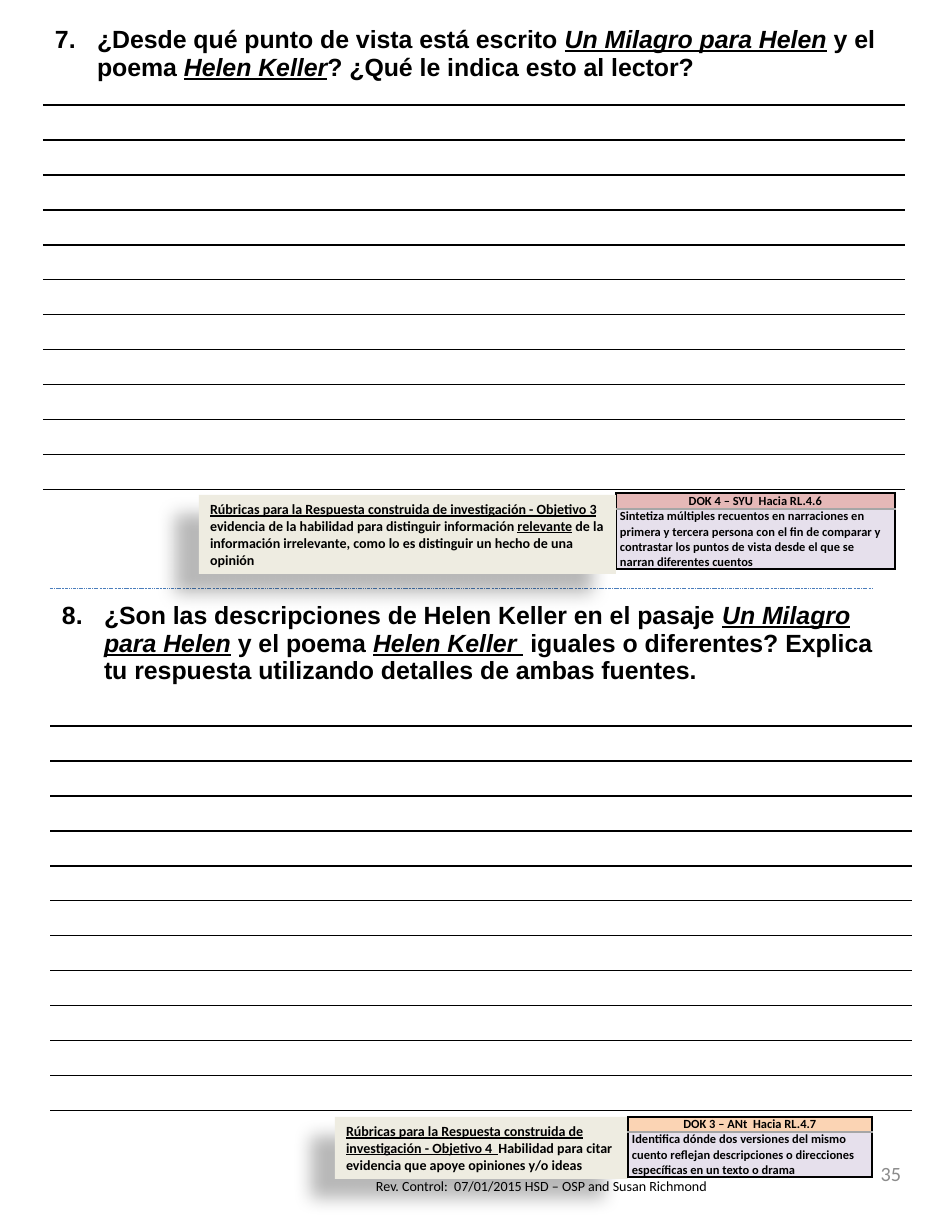
from typing import NamedTuple
from lxml import etree
from pptx import Presentation
from pptx import util as u
from pptx.dml.color import RGBColor
from pptx.enum import dml, shapes, text
from pptx.oxml import ns

PX = 914400 / 112
NO_STYLE = "{2D5ABB26-0587-4C30-8999-92F81FD0307C}"
LINE_GAP = 35
LINE_COUNT = 11

class Theme(NamedTuple):
    ink: str = "000000"
    muted: str = "8C8C8C"
    divider: str = "4B7EBC"
    cell_rule: str = "A6A6A6"
    rubric: str = "EEECE1"
    standard: str = "E6E0EC"
    heading_font: str = "Arial"
    body_font: str = "Calibri"
    heading: int = 16
    number: int = 13
    small: int = 9
    tiny: int = 8

THEME = Theme()

class Box(NamedTuple):
    left: int
    top: int
    width: int
    height: int

class Run(NamedTuple):
    text: str
    italic: bool = False
    underline: bool = False

class Style(NamedTuple):
    size: int
    font: str = THEME.body_font
    color: str = THEME.ink
    bold: bool = True

class Question(NamedTuple):
    number: int
    box: Box
    runs: list[Run]

class Rubric(NamedTuple):
    box: Box
    paragraphs: list[list[Run]]

class Standard(NamedTuple):
    box: Box
    header_height: int
    header_fill: str
    code: str
    description: str

QUESTIONS = [
    Question(7, Box(43, 19, 862, 86), [
        Run("¿Desde qué punto de vista está escrito "), Run("Un Milagro para Helen", True, True),
        Run(" y el poema "), Run("Helen Keller", True, True),
        Run("? ¿Qué le indica esto al lector?")]),
    Question(8, Box(50, 595, 862, 131), [
        Run("¿Son las descripciones de Helen Keller en el pasaje "),
        Run("Un Milagro para Helen", True, True),
        Run(" y el poema "), Run("Helen Keller ", True, True),
        Run(" iguales o diferentes? Explica tu respuesta utilizando detalles de ambas fuentes.")]),
]
RUBRIC_3 = Rubric(Box(199, 495, 417, 79), [
    [Run("Rúbricas para la Respuesta construida de investigación - Objetivo 3", underline=True)],
    [Run("evidencia de la habilidad para distinguir información "),
     Run("relevante", underline=True),
     Run(" de la información irrelevante, como lo es distinguir un hecho de una opinión")]])
RUBRIC_4 = Rubric(Box(335, 1117, 293, 62), [
    [Run("Rúbricas para la Respuesta construida de investigación - Objetivo 4  ", underline=True),
     Run("Habilidad para citar evidencia que apoye opiniones y/o ideas")]])
STANDARDS = [
    Standard(Box(616, 493, 279, 76), 16, "E5B8B7", "DOK 4 – SYU  Hacia RL.4.6",
             "Sintetiza múltiples recuentos en narraciones en primera y tercera persona con el fin de "
             "comparar y contrastar los puntos de vista desde el que se narran diferentes cuentos"),
    Standard(Box(628, 1117, 244, 59), 14, "FBD4B4", "DOK 3 – ANt  Hacia RL.4.7",
             "Identifica dónde dos versiones del mismo cuento reflejan descripciones o direcciones "
             "específicas en un texto o drama"),
]

def px(length: int) -> int:
    return round(length * PX)

def child(parent, tag: str, **attributes):
    return etree.SubElement(parent, ns.qn(tag), {key: str(value) for key, value in attributes.items()})

def paint(fill, color: str) -> None:
    fill.solid()
    fill.fore_color.rgb = RGBColor.from_string(color)

def write(paragraph, runs: list[Run], style: Style) -> None:
    for item in runs:
        run = paragraph.add_run()
        run.text = item.text
        font = run.font
        font.size, font.name, font.bold = u.Pt(style.size), style.font, style.bold
        font.italic, font.underline = item.italic, item.underline
        font.color.rgb = RGBColor.from_string(style.color)

def set_margins(target, horizontal: int, vertical: int) -> None:
    target.margin_left = target.margin_right = px(horizontal)
    target.margin_top = target.margin_bottom = px(vertical)

def add_plain_table(slide, box: Box, heights: list[int]):
    frame = slide.shapes.add_table(len(heights), 1, *map(px, box))
    table = frame.table
    table.first_row = table.horz_banding = False
    frame._element.find(".//" + ns.qn("a:tableStyleId")).text = NO_STYLE
    for row, height in zip(table.rows, heights):
        row.height = px(height)
    return table

def add_borders(cell, **borders: str) -> None:
    for side, color in borders.items():
        line = child(cell._tc.get_or_add_tcPr(), f"a:ln{side}", w=12700)
        child(child(line, "a:solidFill"), "a:srgbClr", val=color)

def add_question(slide, question: Question) -> None:
    heights = [question.box.height] + [LINE_GAP] * LINE_COUNT
    table = add_plain_table(slide, question.box, heights)
    for index in range(len(heights)):
        cell = table.cell(index, 0)
        set_margins(cell, 12, 0 if index else 7)
        add_borders(cell, B=THEME.ink)
        cell.fill.background()
        if index:
            child(cell.text_frame.paragraphs[0]._p, "a:endParaRPr", sz=THEME.small * 100)
    paragraph = table.cell(0, 0).text_frame.paragraphs[0]
    write(paragraph, question.runs, Style(THEME.heading, THEME.heading_font))
    properties = paragraph._p.get_or_add_pPr()
    properties.set("marL", str(px(42)))
    properties.set("indent", str(px(-42)))
    child(properties, "a:buFont", typeface=THEME.heading_font)
    child(properties, "a:buAutoNum", type="arabicPeriod", startAt=question.number)

def add_rubric(slide, rubric: Rubric) -> None:
    shape = slide.shapes.add_shape(shapes.MSO_SHAPE.RECTANGLE, *map(px, rubric.box))
    paint(shape.fill, THEME.rubric)
    shape.line.fill.background()
    shadow = child(child(shape._element.spPr, "a:effectLst"), "a:outerShdw", blurRad=u.Pt(11.8),
                   dist=u.Pt(19.7), dir=141 * 60000, algn="tr", rotWithShape=0)
    child(child(shadow, "a:srgbClr", val=THEME.ink), "a:alpha", val=28000)
    frame = shape.text_frame
    frame.word_wrap = True
    frame.vertical_anchor = text.MSO_ANCHOR.TOP
    for index, runs in enumerate(rubric.paragraphs):
        paragraph = frame.add_paragraph() if index else frame.paragraphs[0]
        paragraph.alignment = text.PP_ALIGN.LEFT
        write(paragraph, runs, Style(THEME.small))

def add_standard(slide, standard: Standard) -> None:
    heights = [standard.header_height, standard.box.height - standard.header_height]
    table = add_plain_table(slide, standard.box, heights)
    ink, rule = THEME.ink, THEME.cell_rule
    rows = [(standard.code, standard.header_fill, ink, rule),
            (standard.description, THEME.standard, rule, ink)]
    for index, (content, fill, top, bottom) in enumerate(rows):
        cell = table.cell(index, 0)
        set_margins(cell, 4, 0)
        add_borders(cell, L=ink, R=ink, T=top, B=bottom)
        paint(cell.fill, fill)
        write(cell.text_frame.paragraphs[0], [Run(content)], Style(THEME.tiny))
    header = table.cell(0, 0)
    header.vertical_anchor = text.MSO_ANCHOR.MIDDLE
    header.text_frame.paragraphs[0].alignment = text.PP_ALIGN.CENTER

def add_label(slide, box: Box, content: str, style: Style, alignment, anchor) -> None:
    frame = slide.shapes.add_textbox(*map(px, box)).text_frame
    frame.word_wrap = True
    frame.vertical_anchor = anchor
    set_margins(frame, 12, 6)
    frame.paragraphs[0].alignment = alignment
    write(frame.paragraphs[0], [Run(content)], style)

def add_divider(slide) -> None:
    divider = slide.shapes.add_connector(shapes.MSO_CONNECTOR.STRAIGHT, *map(px, (50, 588, 872, 588)))
    divider.line.color.rgb = RGBColor.from_string(THEME.divider)
    divider.line.width = u.Pt(0.25)
    divider.line.dash_style = dml.MSO_LINE.DASH_DOT_DOT
    child(divider._element.spPr, "a:effectLst")

def main() -> None:
    presentation = Presentation()
    presentation.slide_width, presentation.slide_height = px(952), px(1232)
    slide = presentation.slides.add_slide(presentation.slide_layouts[6])
    add_label(slide, Box(364, 1172, 476, 29), "Rev. Control:  07/01/2015 HSD – OSP and Susan Richmond",
              Style(THEME.small, bold=False), text.PP_ALIGN.LEFT, text.MSO_ANCHOR.TOP)
    add_label(slide, Box(691, 1140, 222, 66), "35", Style(THEME.number, color=THEME.muted, bold=False),
              text.PP_ALIGN.RIGHT, text.MSO_ANCHOR.MIDDLE)
    for question in QUESTIONS:
        add_question(slide, question)
    add_divider(slide)
    add_rubric(slide, RUBRIC_4)
    for standard in STANDARDS:
        add_standard(slide, standard)
    add_rubric(slide, RUBRIC_3)
    presentation.save("out.pptx")

if __name__ == "__main__":
    main()
